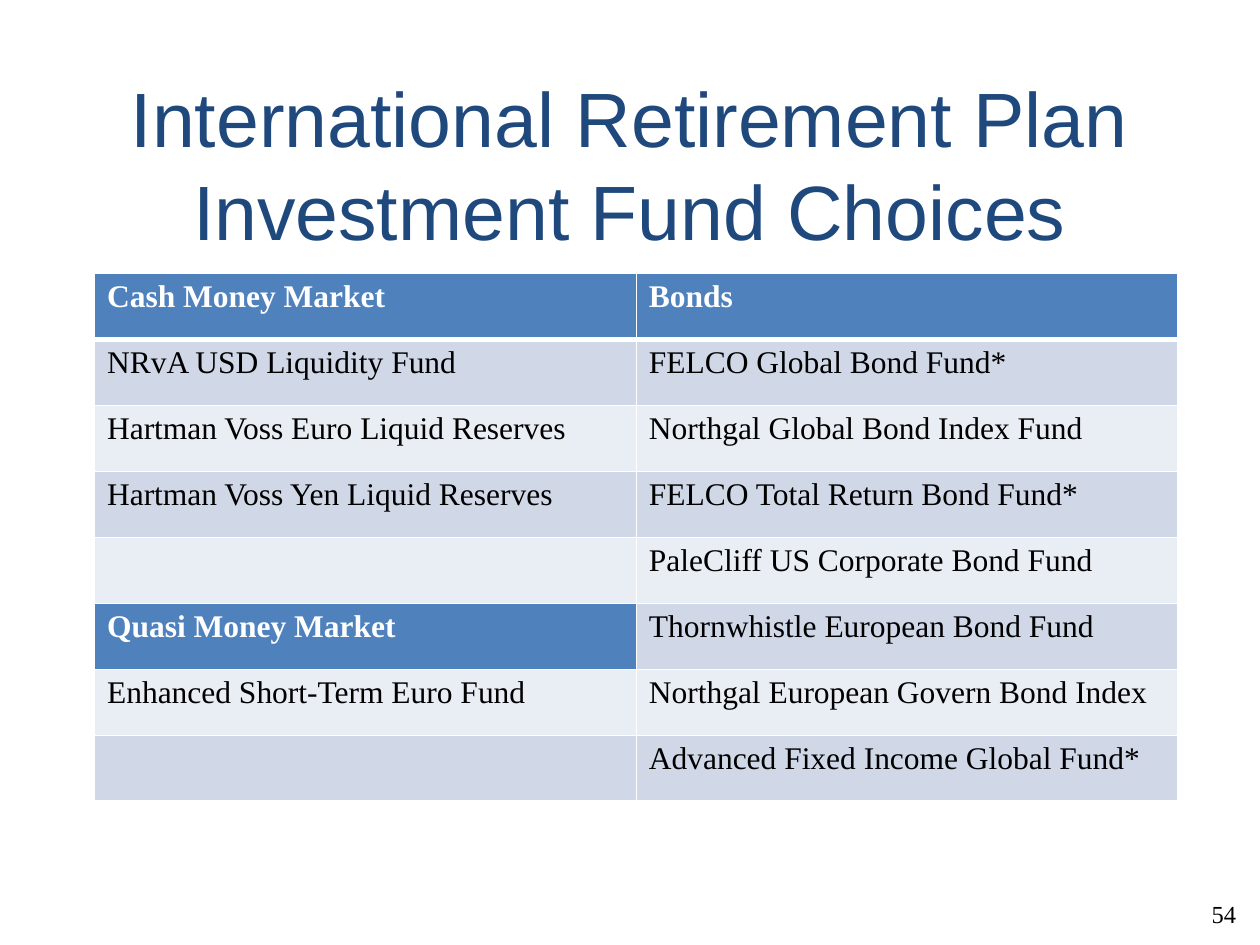
from typing import NamedTuple

from lxml import etree
from pptx import Presentation
from pptx.dml.color import RGBColor
from pptx.enum.text import MSO_ANCHOR, PP_ALIGN
from pptx.oxml.ns import qn
from pptx.util import Inches, Pt

MIDDLE = MSO_ANCHOR.MIDDLE
CENTER, RIGHT = PP_ALIGN.CENTER, PP_ALIGN.RIGHT

COLORS = {
    "title": "1F497D",
    "heading": "4F81BD",
    "band_dark": "D0D8E8",
    "band_light": "E9EDF4",
    "white": "FFFFFF",
    "black": "000000",
}
SANS, SERIF = "Arial", "Times New Roman"


class Label(NamedTuple):
    text: str
    left: float
    top: float
    width: float
    height: float
    size: int
    font: str
    color: str
    align: PP_ALIGN
    wrap: bool


class Entry(NamedTuple):
    text: str = ""
    heading: bool = False


LABELS = [
    Label("54", 9.48, 7.09, 0.43, 0.33, 14, SERIF, "black", RIGHT, False),
    Label("International Retirement Plan Investment Fund Choices",
          0.75, 0.67, 8.5, 1.25, 44, SANS, "title", CENTER, True),
]

MONEY_MARKET = [
    Entry("Cash Money Market", heading=True),
    Entry("NRvA USD Liquidity Fund"),
    Entry("Hartman Voss Euro Liquid Reserves"),
    Entry("Hartman Voss Yen Liquid Reserves"),
    Entry(),
    Entry("Quasi Money Market", heading=True),
    Entry("Enhanced Short-Term Euro Fund"),
    Entry(),
]
BONDS = [
    Entry("Bonds", heading=True),
    Entry("FELCO Global Bond Fund*"),
    Entry("Northgal Global Bond Index Fund"),
    Entry("FELCO Total Return Bond Fund*"),
    Entry("PaleCliff US Corporate Bond Fund"),
    Entry("Thornwhistle European Bond Fund"),
    Entry("Northgal European Govern Bond Index"),
    Entry("Advanced Fixed Income Global Fund*"),
]


def rgb(name: str) -> RGBColor:
    return RGBColor.from_string(COLORS[name])


def style_font(font, face: str, size: int, color: str, bold: bool = False) -> None:
    font.name = face
    font.size = Pt(size)
    font.bold = bold
    font.color.rgb = rgb(color)


def add_label(slide, label: Label) -> None:
    box = slide.shapes.add_textbox(Inches(label.left), Inches(label.top),
                                   Inches(label.width), Inches(label.height))
    frame = box.text_frame
    frame.word_wrap = label.wrap
    frame.vertical_anchor = MIDDLE
    frame.text = label.text
    paragraph = frame.paragraphs[0]
    paragraph.alignment = label.align
    style_font(paragraph.runs[0].font, label.font, label.size, label.color)


def set_borders(cell, widths: dict[str, int]) -> None:
    """Draw white cell edges; must run before the fill, which follows them."""
    properties = cell._tc.get_or_add_tcPr()
    for side, width in widths.items():
        line = etree.SubElement(properties, qn(f"a:ln{side}"), w=str(Pt(width)))
        fill = etree.SubElement(line, qn("a:solidFill"))
        etree.SubElement(fill, qn("a:srgbClr"), val=COLORS["white"])


def fill_cell(cell, entry: Entry, row: int) -> None:
    set_borders(cell, {"L": 1, "R": 1, "T": 3 if row == 1 else 1,
                       "B": 3 if row == 0 else 1})
    band = "band_dark" if row % 2 else "band_light"
    cell.fill.solid()
    cell.fill.fore_color.rgb = rgb("heading" if entry.heading else band)
    cell.text = entry.text
    style_font(cell.text_frame.paragraphs[0].font, SERIF, 18, "black")
    for run in cell.text_frame.paragraphs[0].runs:
        style_font(run.font, SERIF, 18,
                   "white" if entry.heading else "black", entry.heading)


def add_fund_table(slide, columns: list[list[Entry]]) -> None:
    funds = slide.shapes.add_table(
        len(columns[0]), len(columns),
        Inches(0.75), Inches(2.17), Inches(8.6), Inches(4.19)).table
    for column, entries in enumerate(columns):
        for row, entry in enumerate(entries):
            fill_cell(funds.cell(row, column), entry, row)


def main() -> None:
    presentation = Presentation()
    presentation.slide_width = Inches(10)
    presentation.slide_height = Inches(7.5)
    slide = presentation.slides.add_slide(presentation.slide_layouts[6])

    # Page number and title
    for label in LABELS:
        add_label(slide, label)

    # Fund choices
    add_fund_table(slide, [MONEY_MARKET, BONDS])

    presentation.save("out.pptx")


if __name__ == "__main__":
    main()
